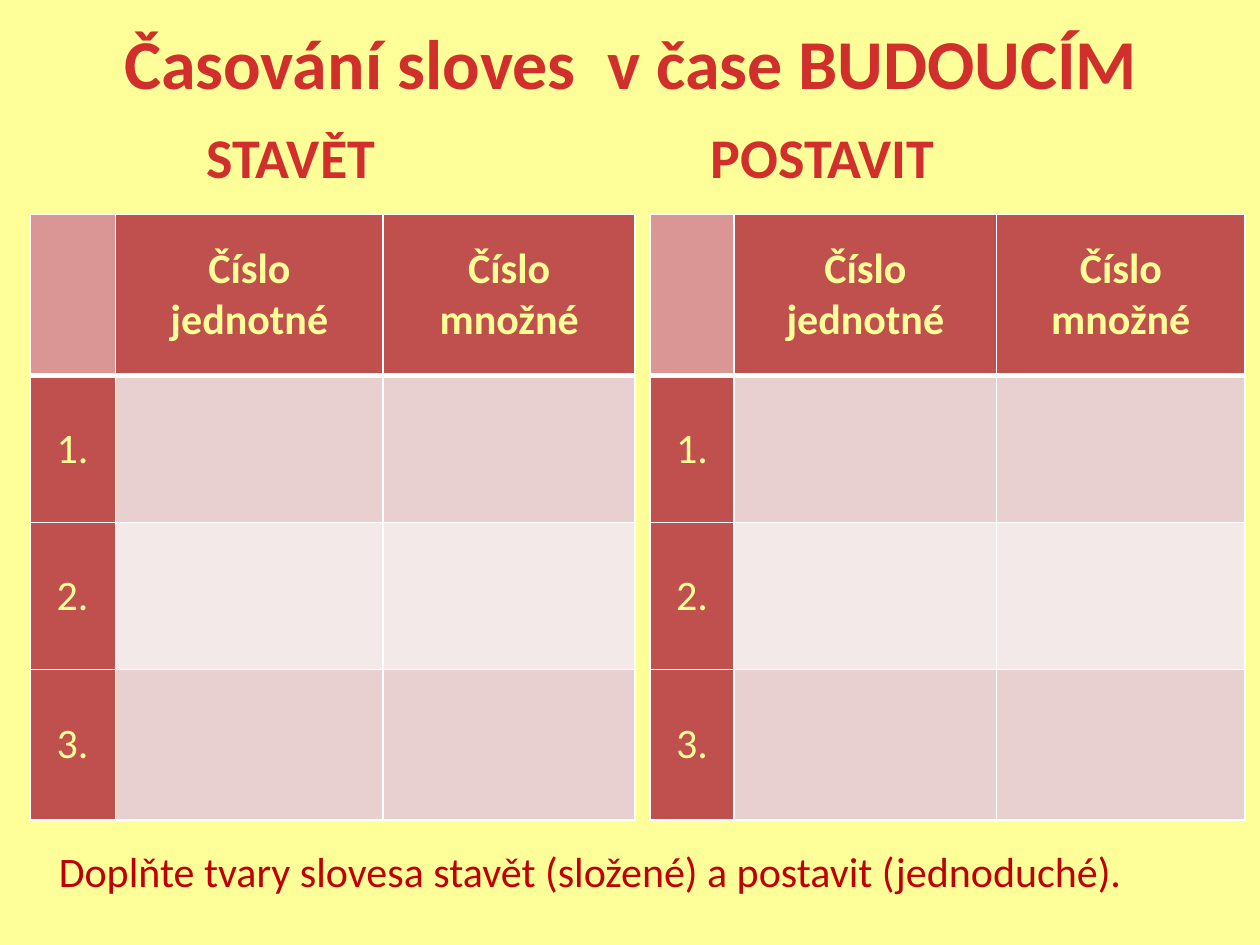
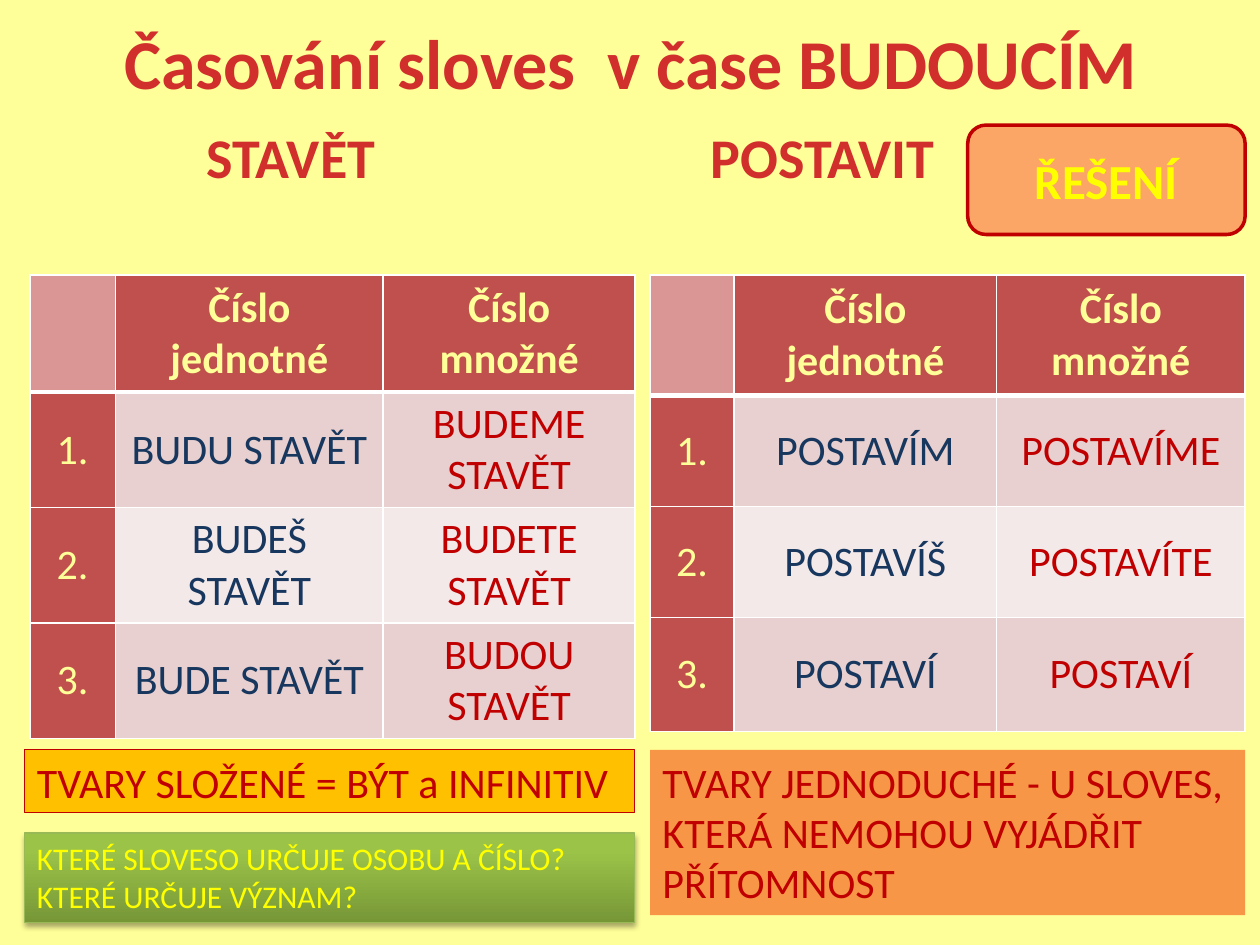
"""Build two slides on Czech verbs in the future tense: a task and its solution."""
from dataclasses import dataclass

from lxml.etree import SubElement
from pptx import Presentation
from pptx.dml.color import RGBColor
from pptx.enum.shapes import MSO_SHAPE
from pptx.enum.text import MSO_ANCHOR, PP_ALIGN
from pptx.oxml.ns import qn
from pptx.util import Pt

TITLE = "Časování sloves  v čase BUDOUCÍM"
VERBS = "\tSTAVĚT\tPOSTAVIT"
TASK = "Doplňte tvary slovesa stavět (složené) a postavit (jednoduché)."
HEADS = ["", "Číslo jednotné", "Číslo množné"]
LABELS = ["1.", "2.", "3."]
BLANK = [("", "")] * 3
BUILD = [
    ("BUDU STAVĚT", "BUDEME STAVĚT"),
    ("BUDEŠ STAVĚT", "BUDETE STAVĚT"),
    ("BUDE STAVĚT", "BUDOU STAVĚT"),
]
ERECT = [
    ("POSTAVÍM", "POSTAVÍME"),
    ("POSTAVÍŠ", "POSTAVÍTE"),
    ("POSTAVÍ", "POSTAVÍ"),
]
KEY = "ŘEŠENÍ"
LONG = "TVARY SLOŽENÉ = BÝT a INFINITIV"
SHORT = "TVARY JEDNODUCHÉ - U SLOVES, KTERÁ NEMOHOU VYJÁDŘIT PŘÍTOMNOST"
ASK = "KTERÉ SLOVESO URČUJE OSOBU A ČÍSLO?\nKTERÉ URČUJE VÝZNAM?"


@dataclass(frozen=True)
class Theme:
    """Hold the colours, type sizes and shared places."""
    font: str = "Calibri"
    page: str = "FFFF99"
    title: str = "D02F2C"
    red: str = "C00000"
    navy: str = "17375E"
    yellow: str = "FFFF00"
    white: str = "FFFFFF"
    head: str = "C0504D"
    corner: str = "D99694"
    bands: tuple = ("E8D0D0", "F4E9E9")
    gold: str = "FFC000"
    orange: str = "F79646"
    glow: str = "F61616"
    moss: str = "779737"
    leaf: str = "9BC348"
    stem: str = "98B955"
    huge: int = 40
    large: int = 32
    mid: int = 28
    base: int = 24
    small: int = 18
    stops: tuple = (72, 360)
    left: tuple = (17, (49, 153, 144))
    right: tuple = (371.5, (48, 150, 142))


T = Theme()
TALL = (92, 84, 84, 86)


def tint(code):
    """Turn a hex code into a colour."""
    return RGBColor.from_string(code)


def write(frame, text, *, size=T.base, color=T.red, bold=False,
          align=PP_ALIGN.LEFT, anchor=MSO_ANCHOR.TOP, tabs=()):
    """Fill a text frame, one paragraph a line, in the given format."""
    frame.word_wrap = True
    frame.vertical_anchor = anchor
    frame.text = text
    for para in frame.paragraphs:
        para.alignment = align
        font = para.font
        if tabs:
            stops = SubElement(para._p.get_or_add_pPr(), qn("a:tabLst"))
            for stop in tabs:
                SubElement(stops, qn("a:tab"), pos=str(Pt(stop)), algn="l")
        for run in para.runs:
            font = run.font
            font.name, font.size, font.bold = T.font, Pt(size), bold
            font.color.rgb = tint(color)


def label(slide, text, box, **form):
    """Add a plain text box."""
    write(slide.shapes.add_textbox(*map(Pt, box)).text_frame, text, **form)


def panel(slide, text, box, fill, line=None, width=0.75,
          kind=MSO_SHAPE.RECTANGLE, **form):
    """Add a filled shape with text."""
    shape = slide.shapes.add_shape(kind, *map(Pt, box))
    shape.shadow.inherit = False
    shape.fill.solid()
    shape.fill.fore_color.rgb = tint(fill)
    if line:
        shape.line.color.rgb = tint(line)
        shape.line.width = Pt(width)
    else:
        shape.line.fill.background()
    write(shape.text_frame, text, **form)
    return shape


def fade(shape, share):
    """Make a solid fill partly clear."""
    color = shape._element.spPr.find(qn("a:solidFill"))[0]
    SubElement(color, qn("a:alpha"), val=str(share * 1000))


def blend(shape, codes, ends):
    """Fade a fill upward between two colours."""
    shape.fill.gradient()
    shape.fill.gradient_angle = 90
    for stop, code, end in zip(shape.fill.gradient_stops, codes, ends):
        stop.color.rgb = tint(code)
        stop.position = end


def shade(shape, blur, dist, share):
    """Cast a soft black shadow straight down."""
    effect = shape._element.spPr.find(qn("a:effectLst"))
    cast = SubElement(effect, qn("a:outerShdw"), blurRad=str(Pt(blur)),
                      dist=str(Pt(dist)), dir="5400000", rotWithShape="0")
    color = SubElement(cast, qn("a:srgbClr"), val="000000")
    SubElement(color, qn("a:alpha"), val=str(share * 1000))


def edge(cell, row):
    """Draw white cell borders, thick below the header row."""
    props = cell._tc.get_or_add_tcPr()
    for side in "LRTB":
        thick = (row, side) in ((0, "B"), (1, "T"))
        line = SubElement(props, qn(f"a:ln{side}"), w=str(Pt(3 if thick else 1)))
        fill = SubElement(line, qn("a:solidFill"))
        SubElement(fill, qn("a:srgbClr"), val=T.white)


def style(row, col):
    """Give the fill, text colour and weight of a cell."""
    if row == 0 or col == 0:
        return T.head if row + col else T.corner, T.page, row == 0
    return T.bands[(row - 1) % 2], (T.navy, T.red)[col - 1], False


def grid(slide, forms, place, top, highs):
    """Add a table of verb forms by person and number."""
    left, wides = place
    rows = [HEADS] + [[mark, *pair] for mark, pair in zip(LABELS, forms)]
    box = (left, top, sum(wides), sum(highs))
    table = slide.shapes.add_table(len(rows), len(HEADS), *map(Pt, box)).table
    table.first_row = table.horz_banding = False
    for col, wide in zip(table.columns, wides):
        col.width = Pt(wide)
    for r, (line, high) in enumerate(zip(rows, highs)):
        table.rows[r].height = Pt(high)
        for c, text in enumerate(line):
            cell = table.cell(r, c)
            fill, color, bold = style(r, c)
            edge(cell, r)
            cell.fill.solid()
            cell.fill.fore_color.rgb = tint(fill)
            write(cell.text_frame, text, color=color, bold=bold,
                  align=PP_ALIGN.CENTER)
            cell.vertical_anchor = MSO_ANCHOR.MIDDLE


def start(deck):
    """Add a slide with the shared ground, title and verbs."""
    slide = deck.slides.add_slide(deck.slide_layouts[6])
    slide.background.fill.solid()
    slide.background.fill.fore_color.rgb = tint(T.page)
    label(slide, TITLE, (36.5, 1.5, 648, 67), size=T.huge, color=T.title,
          bold=True, align=PP_ALIGN.CENTER, anchor=MSO_ANCHOR.MIDDLE)
    label(slide, VERBS, (39, 66.5, 648, 400), size=T.large, color=T.title,
          bold=True, tabs=T.stops)
    return slide


def task(deck):
    """Add the slide with empty tables."""
    slide = start(deck)
    for place in (T.left, T.right):
        grid(slide, BLANK, place, 122.5, TALL)
    label(slide, TASK, (26.5, 479.5, 675, 36))


def answer(deck):
    """Add the slide with the solution."""
    slide = start(deck)
    grid(slide, BUILD, T.left, 157, (67, 66, 66, 66))
    grid(slide, ERECT, T.right, 157, (69, 63.5, 63.5, 65))
    key = panel(slide, KEY, (553, 71.5, 158.5, 62.5), T.glow, T.red, 2,
                MSO_SHAPE.ROUNDED_RECTANGLE, size=T.mid, color=T.yellow,
                bold=True, align=PP_ALIGN.CENTER, anchor=MSO_ANCHOR.MIDDLE)
    fade(key, 38)
    panel(slide, LONG, (14, 428.5, 348.5, 36), T.gold, T.red)
    panel(slide, SHORT, (371.5, 428.5, 340, 94.5), T.orange)
    ask = panel(slide, ASK, (14, 476, 348.5, 51), T.leaf, T.stem,
                size=T.small, color=T.yellow)
    blend(ask, (T.moss, T.leaf), (0, 0.8))
    shade(ask, 3.1, 1.8, 35)


def main():
    """Build and save the deck."""
    deck = Presentation()
    deck.slide_width, deck.slide_height = Pt(720), Pt(540)
    task(deck)
    answer(deck)
    deck.save("out.pptx")


if __name__ == "__main__":
    main()
